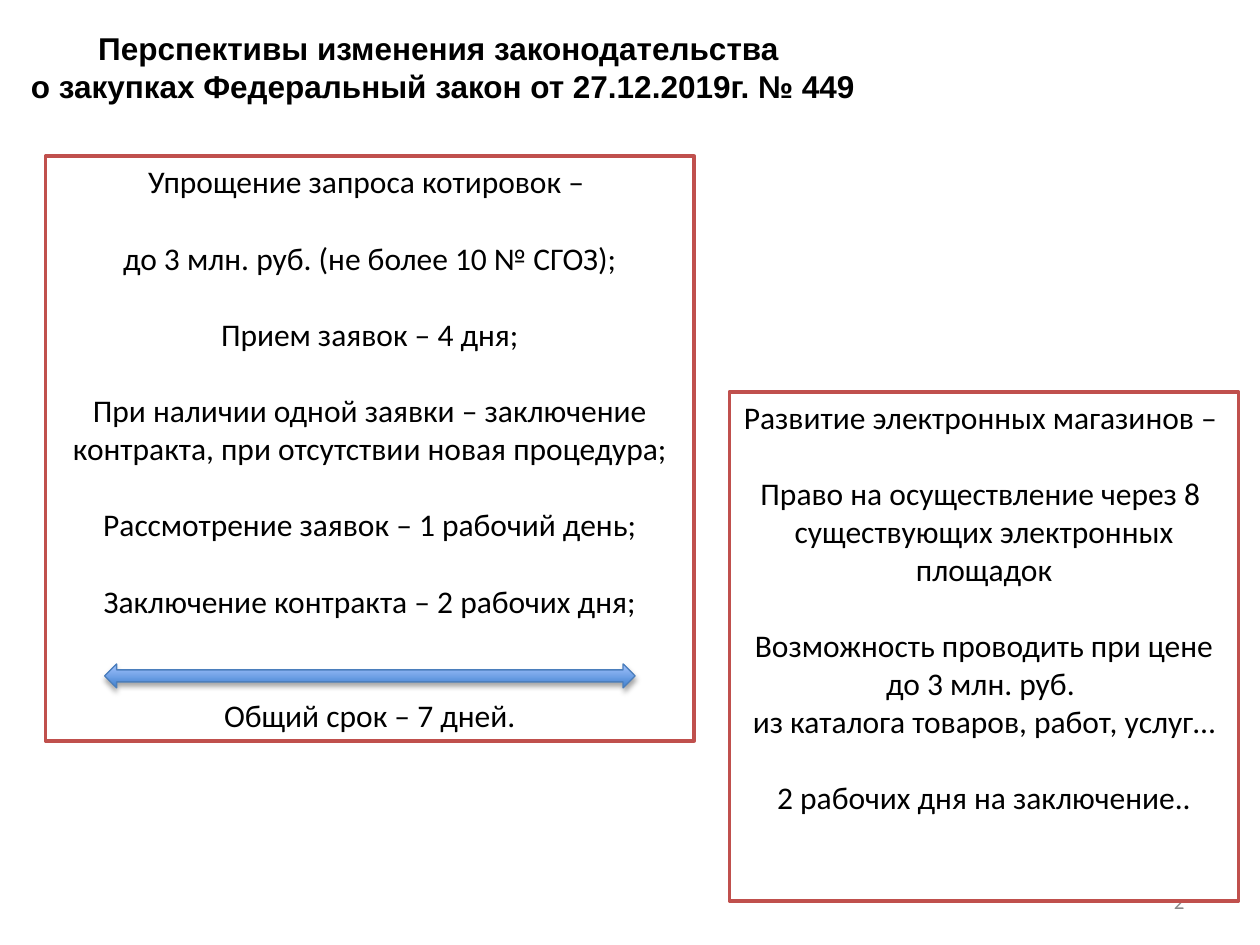
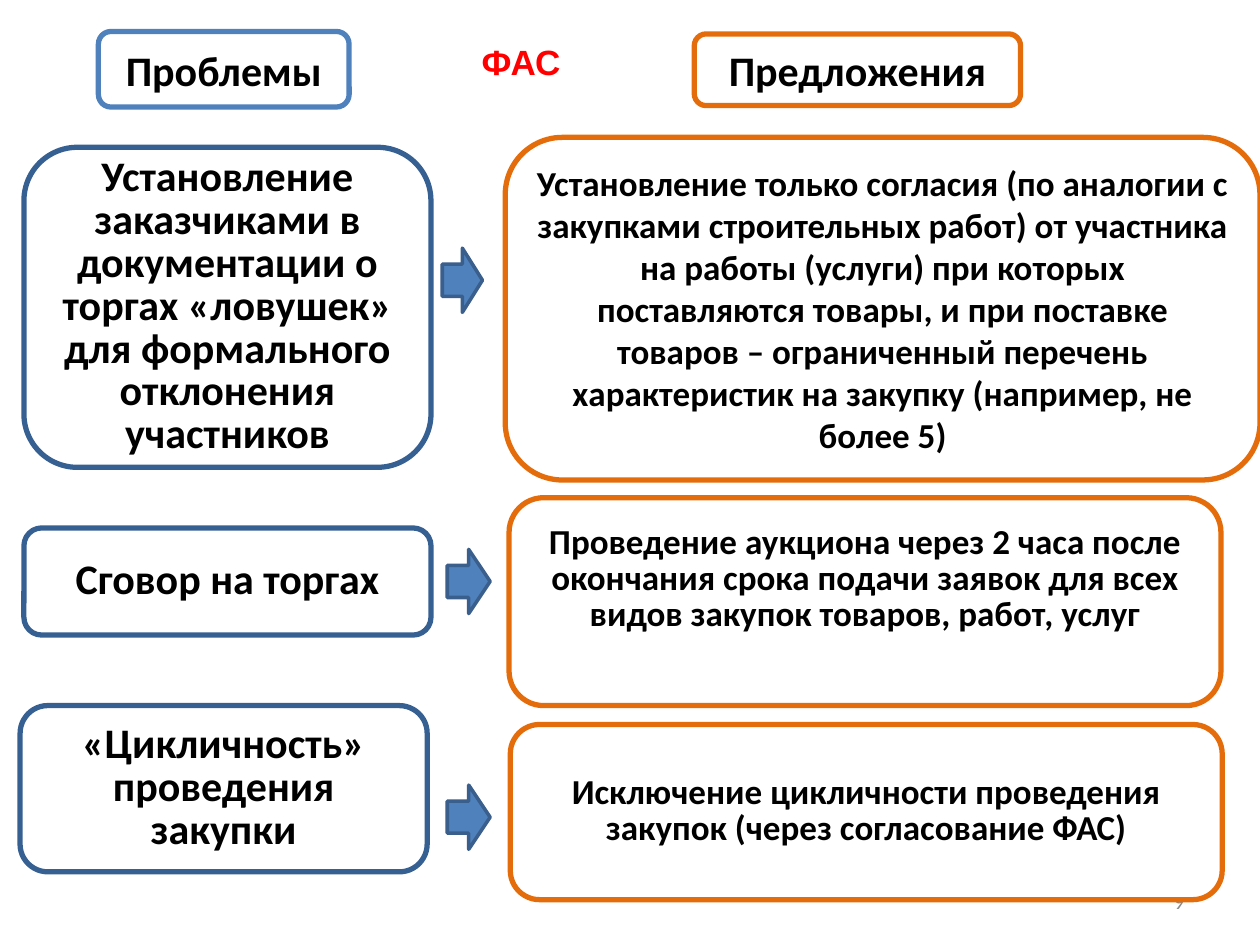
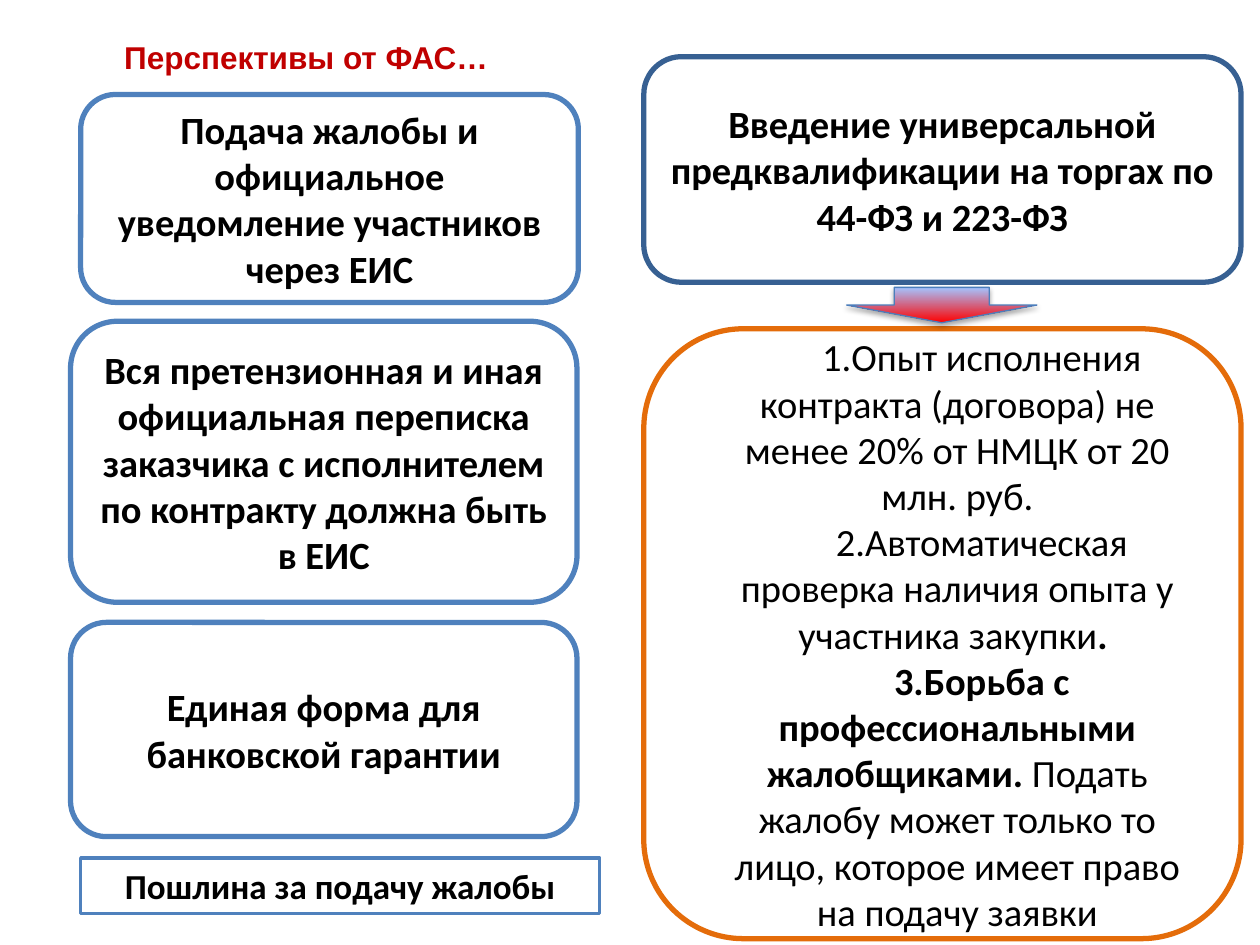
"""Builds three slides on prospective changes in procurement law."""
from dataclasses import dataclass
from typing import NamedTuple

from lxml.etree import SubElement
from pptx import Presentation
from pptx.dml.color import RGBColor
from pptx.enum.shapes import MSO_SHAPE as Preset
from pptx.enum.text import MSO_ANCHOR as Anchor, PP_ALIGN as Align
from pptx.oxml.ns import qn
from pptx.util import Pt


@dataclass(frozen=True)
class Theme:
    heading_font: str = "Arial"
    body_font: str = "Calibri"
    ink: str = "000000"
    paper: str = "FFFFFF"
    grey: str = "898989"
    brick: str = "C0504D"
    blue: str = "4F81BD"
    navy: str = "376092"
    arrow_edge: str = "3A5F8C"
    glow_edge: str = "4B7EBC"
    glow_top: str = "A4C4FF"
    glow_blue: str = "3F80CE"
    orange: str = "E46C0A"
    red: str = "FF0000"
    crimson: str = "C00000"
    footer: float = 12
    small: float = 18
    medium: float = 20
    large: float = 22
    huge: float = 24
    blank_line: float = 22
    tight: float = 0.85


THEME = Theme()


class Frame(NamedTuple):
    left: float
    top: float
    width: float
    height: float


class Span(NamedTuple):
    text: str
    bold: bool


class Para(NamedTuple):
    spans: tuple[Span, ...]
    gap_lines: int = 0


@dataclass(frozen=True)
class Style:
    size: float
    bold: bool = True
    font: str = THEME.body_font
    color: str = THEME.ink
    align: Align = Align.CENTER
    spacing: float | None = None
    numbered: bool = False


@dataclass(frozen=True)
class Panel:
    frame: Frame
    paras: tuple[Para, ...]
    edge: str
    style: Style
    preset: Preset = Preset.ROUNDED_RECTANGLE
    weight: float = 3
    anchor: Anchor = Anchor.MIDDLE
    bottom_inset: float = 3.6


PLAIN = Style(THEME.small, bold=False)
CARD = Style(THEME.large)
HEADER = Style(THEME.huge)
PROBLEM = Style(THEME.huge, spacing=THEME.tight)
PROPOSAL = Style(THEME.medium, spacing=THEME.tight)
LIST = Style(THEME.large, bold=False, numbered=True)
NUMBER = Style(THEME.footer, bold=False, color=THEME.grey, align=Align.RIGHT)


def line(text: str, gap_lines: int = 0, bold: bool = False) -> Para:
    """Return a paragraph of one span."""
    return Para((Span(text, bold),), gap_lines)


def points(frame: Frame) -> list[Pt]:
    """Turn a frame into lengths."""
    return [Pt(value) for value in frame]


def number_paragraph(para) -> None:
    """Give a paragraph automatic numbering and an indented first line."""
    properties = para._p.get_or_add_pPr()
    properties.set("marL", str(Pt(17)))
    properties.set("indent", str(Pt(28)))
    SubElement(properties, qn("a:buAutoNum"), type="arabicPeriod")


def write(text_frame, paras: tuple[Para, ...], style: Style) -> None:
    """Fill a text frame with styled paragraphs."""
    for index, content in enumerate(paras):
        para = text_frame.paragraphs[0] if index == 0 else text_frame.add_paragraph()
        para.alignment = style.align
        if content.gap_lines:
            para.space_before = Pt(THEME.blank_line * content.gap_lines)
        if style.spacing:
            para.line_spacing = style.spacing
        if style.numbered:
            number_paragraph(para)
        para.font.name = style.font
        para.font.size = Pt(style.size)
        para.font.bold = style.bold
        para.font.color.rgb = RGBColor.from_string(style.color)
        for text, bold in content.spans:
            span = para.add_run()
            span.text = text
            if len(content.spans) > 1:
                span.font.bold = bold


def add_shape(page, preset: Preset, frame: Frame, edge: str, weight: float, fill: str | None = None):
    """Draw an outlined shape without shadow."""
    shape = page.shapes.add_shape(preset, *points(frame))
    shape.shadow.inherit = False
    shape.line.color.rgb = RGBColor.from_string(edge)
    shape.line.width = Pt(weight)
    if fill:
        shape.fill.solid()
        shape.fill.fore_color.rgb = RGBColor.from_string(fill)
    return shape


def add_panel(page, panel: Panel) -> None:
    """Draw a white outlined panel with its text."""
    box = add_shape(page, panel.preset, panel.frame, panel.edge, panel.weight, THEME.paper)
    text_frame = box.text_frame
    text_frame.word_wrap = True
    text_frame.vertical_anchor = panel.anchor
    text_frame.margin_bottom = Pt(panel.bottom_inset)
    write(text_frame, panel.paras, panel.style)


def add_glow_arrow(page, preset: Preset, frame: Frame, bottom: str) -> None:
    """Draw an arrow with a vertical gradient and a soft shadow."""
    arrow = add_shape(page, preset, frame, THEME.glow_edge, 0.75)
    arrow.fill.gradient()
    arrow.fill.gradient_angle = 90
    for stop, color in zip(arrow.fill.gradient_stops, (bottom, THEME.glow_top)):
        stop.color.rgb = RGBColor.from_string(color)
    effects = arrow._element.spPr.find(qn("a:effectLst"))
    shadow = SubElement(effects, qn("a:outerShdw"), blurRad=str(Pt(3.1)), dist=str(Pt(1.8)),
                        dir="5400000", rotWithShape="0")
    color = SubElement(shadow, qn("a:srgbClr"), val=THEME.ink)
    SubElement(color, qn("a:alpha"), val="35000")


def add_text(page, frame: Frame, paras: tuple[Para, ...], style: Style, anchor: Anchor = Anchor.TOP) -> None:
    """Place unwrapped text."""
    text_frame = page.shapes.add_textbox(*points(frame)).text_frame
    text_frame.word_wrap = False
    text_frame.vertical_anchor = anchor
    write(text_frame, paras, style)


def add_heading(page, frame: Frame, paras: tuple[Para, ...], color: str, size: float = THEME.small) -> None:
    """Place a bold slide heading."""
    add_text(page, frame, paras, Style(size, font=THEME.heading_font, color=color))


def add_page(deck, number: str = ""):
    """Add a blank slide, numbered if a number is given."""
    page = deck.slides.add_slide(deck.slide_layouts[6])
    if number:
        add_text(page, Frame(516.2, 500.4, 167.8, 28.8), (line(number),), NUMBER, Anchor.MIDDLE)
    return page


def build_law_page(deck) -> None:
    """Show the simplified quotation request and electronic shops."""
    page = add_page(deck, "2")
    add_heading(page, Frame(7.9, 13, 490.3, 51), (
        line("Перспективы изменения законодательства "),
        line("о закупках Федеральный закон от 27.12.2019г. № 449")), THEME.ink)
    quotation = (
        line("Упрощение запроса котировок – "),
        line("до 3 млн. руб. (не более 10 № СГОЗ);", 1),
        line("Прием заявок – 4 дня;", 1),
        line("При наличии одной заявки – заключение контракта, при отсутствии новая процедура;", 1),
        line("Рассмотрение заявок – 1 рабочий день;", 1),
        line("Заключение контракта – 2 рабочих дня;", 1),
        line("Общий срок – 7 дней.", 2))
    shops = (
        line("Развитие электронных магазинов – "),
        line("Право на осуществление через 8 ", 1),
        line("существующих электронных площадок"),
        line("Возможность проводить при цене до 3 млн. руб. ", 1),
        line("из каталога товаров, работ, услуг…"),
        line("2 рабочих дня на заключение..", 1))
    for frame, paras in ((Frame(25.9, 89.3, 370.8, 334.1), quotation),
                         (Frame(416.9, 223.9, 290.9, 290.9), shops)):
        add_panel(page, Panel(frame, paras, THEME.brick, PLAIN, Preset.RECTANGLE, 2, Anchor.TOP))
    add_glow_arrow(page, Preset.LEFT_RIGHT_ARROW, Frame(59.8, 379.4, 303.1, 13.7), THEME.glow_blue)


def build_problem_page(deck) -> None:
    """Pair each problem with its proposal."""
    page = add_page(deck, "9")
    panels = (
        Panel(Frame(56.2, 18, 143.3, 43.2), (line("Проблемы"),), THEME.blue, HEADER),
        Panel(Frame(396.7, 19.4, 186.5, 41), (line("Предложения"),), THEME.orange, HEADER),
        Panel(Frame(13.7, 84.2, 232.6, 182.9), (line(
            "Установление заказчиками в документации о торгах «ловушек» "
            "для формального отклонения участников"),), THEME.navy, PROBLEM),
        Panel(Frame(288.7, 78.5, 431.3, 195.8), (line(
            "Установление только согласия (по аналогии с закупками строительных работ) "
            "от участника на работы (услуги) при которых поставляются товары, и при поставке "
            "товаров – ограниченный перечень характеристик на закупку (например, не более 5)"),),
            THEME.orange, Style(THEME.medium)),
        Panel(Frame(13.7, 301.7, 232.6, 61.2), (line("Сговор на торгах"),), THEME.navy, PROBLEM),
        Panel(Frame(290.9, 284.4, 406.8, 118.8), (line(
            "Проведение аукциона через 2 часа после окончания срока подачи заявок "
            "для всех видов закупок товаров, работ, услуг"),),
            THEME.orange, PROPOSAL, bottom_inset=28.5),
        Panel(Frame(11.5, 403.2, 232.6, 95), (line("«Цикличность» проведения закупки"),),
              THEME.navy, PROBLEM),
        Panel(Frame(291.6, 414, 406.8, 100.1), (line(
            "Исключение цикличности проведения закупок (через согласование ФАС)"),),
            THEME.orange, PROPOSAL))
    for panel in panels:
        add_panel(page, panel)
    for left, top, width in ((252.7, 141.8, 23), (255.6, 313.9, 24.5), (255.6, 448.6, 24.5)):
        add_shape(page, Preset.RIGHT_ARROW, Frame(left, top, width, 36.7), THEME.arrow_edge, 2, THEME.blue)
    add_heading(page, Frame(267.8, 19.4, 59.8, 31.7), (line("ФАС"),), THEME.red, THEME.medium)


def build_outlook_page(deck) -> None:
    """Show the outlook and the prequalification rules."""
    page = add_page(deck)
    cards = (
        (Frame(46.1, 54, 284.4, 118.8), THEME.blue,
         "Подача жалобы и официальное уведомление участников через ЕИС"),
        (Frame(40.3, 183.6, 289.4, 160.6), THEME.blue,
         "Вся претензионная и иная официальная переписка заказчика с исполнителем "
         "по контракту должна быть в ЕИС"),
        (Frame(40.3, 355.7, 289.4, 122.4), THEME.blue, "Единая форма для банковской гарантии"),
        (Frame(367.9, 32.4, 341.3, 128.9), THEME.navy,
         "Введение универсальной предквалификации на торгах по 44-ФЗ и 223-ФЗ"))
    for frame, edge, text in cards:
        add_panel(page, Panel(frame, (line(text),), edge, CARD))
    rules = (
        line("Опыт исполнения контракта (договора) не менее 20% от НМЦК от 20 млн. руб."),
        Para((Span("Автоматическая проверка наличия опыта у участника закупки", False), Span(". ", True))),
        Para((Span("Борьба с профессиональными жалобщиками. ", True),
              Span("Подать жалобу может только то лицо, которое имеет право на подачу заявки", False))))
    add_panel(page, Panel(Frame(367.9, 187.9, 341.3, 348.5), rules, THEME.orange, LIST))
    add_glow_arrow(page, Preset.DOWN_ARROW, Frame(483.8, 164.2, 108.7, 20.2), THEME.red)
    add_heading(page, Frame(62.6, 18, 229.7, 28.8), (line("Перспективы от ФАС… "),), THEME.crimson)
    add_panel(page, Panel(Frame(46.1, 490.3, 296.6, 31.7), (line("Пошлина за подачу жалобы"),),
                          THEME.blue, Style(THEME.medium), Preset.RECTANGLE, 2, Anchor.TOP))


def main() -> None:
    """Build and save the deck."""
    deck = Presentation()
    deck.slide_width, deck.slide_height = Pt(720), Pt(540)
    build_law_page(deck)
    build_problem_page(deck)
    build_outlook_page(deck)
    deck.save("out.pptx")


if __name__ == "__main__":
    main()
